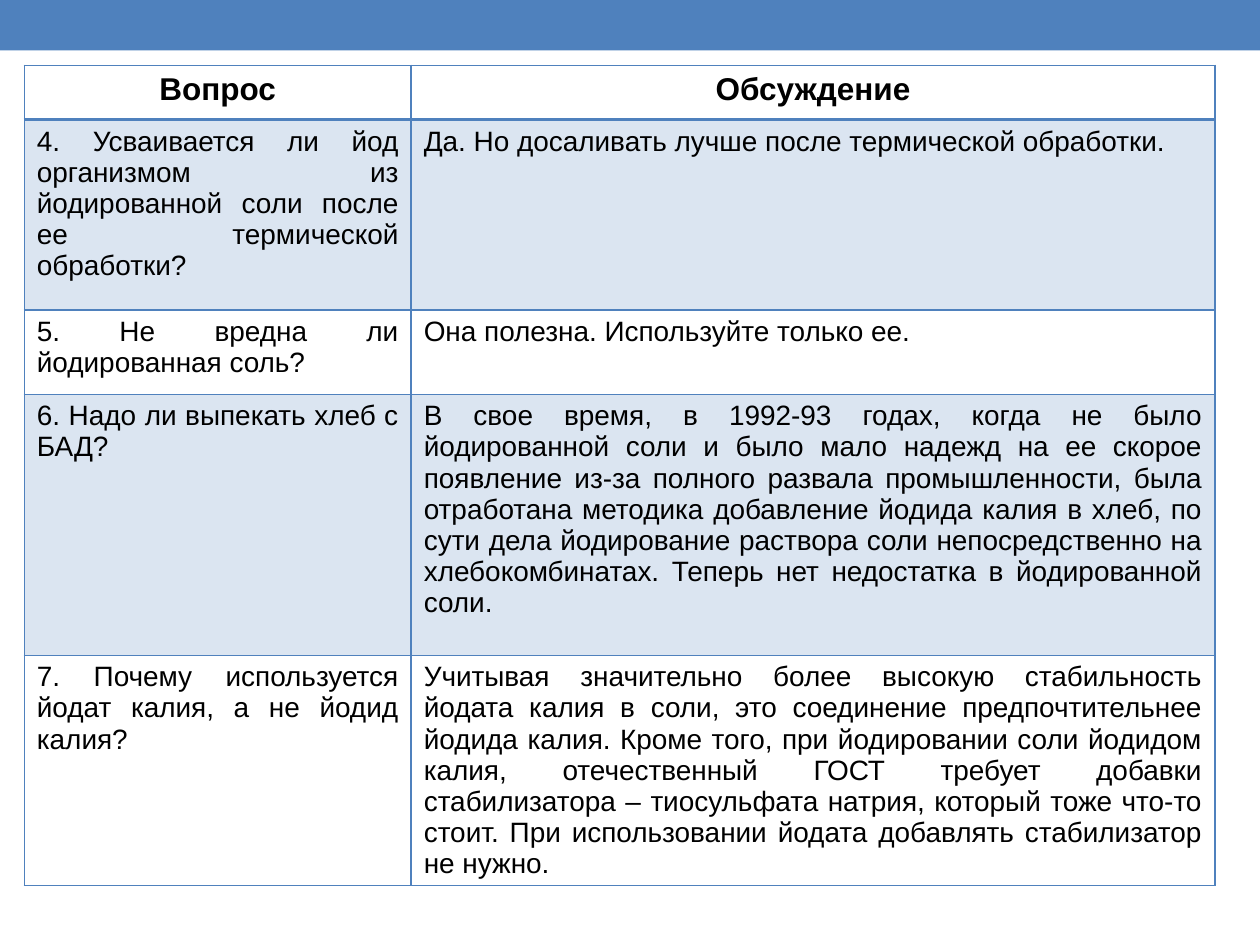
import lxml.etree
import pptx
import pptx.dml.color
import pptx.enum.shapes
import pptx.enum.text
import pptx.oxml.ns
import pptx.util
from pptx.util import Cm

THEME = {
    "font": "Arial",
    "text": pptx.dml.color.RGBColor.from_string("000000"),
    "accent": "4F81BD",
    "band_alpha": 20,
    "header_size": pptx.util.Pt(18),
    "body_size": pptx.util.Pt(16),
    "line": pptx.util.Pt(1),
    "header_line": pptx.util.Pt(2),
}
ACCENT = pptx.dml.color.RGBColor.from_string(THEME["accent"])
ALIGN = pptx.enum.text.PP_ALIGN

ROWS = [
    ("Вопрос", "Обсуждение"),
    ("4. Усваивается ли йод организмом из йодированной соли после ее "
     "термической обработки?",
     "Да. Но досаливать лучше после термической обработки."),
    ("5. Не вредна ли йодированная соль?",
     "Она полезна. Используйте только ее."),
    ("6. Надо ли выпекать хлеб с БАД?",
     "В свое время, в 1992-93 годах, когда не было йодированной соли и было "
     "мало надежд на ее скорое появление из-за полного развала промышленности, "
     "была отработана методика добавление йодида калия в хлеб, по сути дела "
     "йодирование раствора соли непосредственно на хлебокомбинатах. Теперь нет "
     "недостатка в йодированной соли."),
    ("7. Почему используется йодат калия, а не йодид калия?",
     "Учитывая значительно более высокую стабильность йодата калия в соли, это "
     "соединение предпочтительнее йодида калия. Кроме того, при йодировании "
     "соли йодидом калия, отечественный ГОСТ требует добавки стабилизатора – "
     "тиосульфата натрия, который тоже что-то стоит. При использовании йодата "
     "добавлять стабилизатор не нужно."),
]
COL_WIDTHS = [Cm(7.8), Cm(16.2)]
ROW_HEIGHTS = [Cm(1.09), Cm(3.84), Cm(1.7), Cm(5.26), Cm(4.55)]


def add_solid(parent, alpha=None):
    """Append an accent-coloured solid fill, with opacity in percent if given."""
    fill = lxml.etree.SubElement(parent, pptx.oxml.ns.qn("a:solidFill"))
    clr = lxml.etree.SubElement(fill, pptx.oxml.ns.qn("a:srgbClr"), val=THEME["accent"])
    if alpha is not None:
        lxml.etree.SubElement(clr, pptx.oxml.ns.qn("a:alpha"), val=str(alpha * 1000))


prs = pptx.Presentation()
prs.slide_width, prs.slide_height = Cm(25.4), Cm(19.05)
s = prs.slides.add_slide(prs.slide_layouts[6])

bar = s.shapes.add_shape(pptx.enum.shapes.MSO_SHAPE.RECTANGLE,
                         0, 0, prs.slide_width, Cm(1.02))
bar.shadow.inherit = False
bar.fill.solid()
bar.fill.fore_color.rgb = ACCENT
bar.line.fill.background()

table = s.shapes.add_table(len(ROWS), len(COL_WIDTHS), Cm(0.49), Cm(1.32),
                           sum(COL_WIDTHS), sum(ROW_HEIGHTS)).table
table.horz_banding = False
for column, width in zip(table.columns, COL_WIDTHS):
    column.width = width

for i, (texts, height) in enumerate(zip(ROWS, ROW_HEIGHTS)):
    table.rows[i].height = height
    header = i == 0
    for j, text in enumerate(texts):
        cell = table.cell(i, j)
        p = cell.text_frame.paragraphs[0]
        p.alignment = ALIGN.CENTER if header else ALIGN.JUSTIFY
        r = p.add_run()
        r.text = text
        r.font.name = THEME["font"]
        r.font.size = THEME["header_size"] if header else THEME["body_size"]
        r.font.bold = header
        r.font.color.rgb = THEME["text"]

        # Borders come before the fill in the cell properties
        tcPr = cell._tc.get_or_add_tcPr()
        for side in "LRTB":
            under_header = (i, side) in ((0, "B"), (1, "T"))
            width = THEME["header_line"] if under_header else THEME["line"]
            add_solid(lxml.etree.SubElement(tcPr, pptx.oxml.ns.qn(f"a:ln{side}"),
                                            w=str(int(width))))
        if i % 2:
            add_solid(tcPr, THEME["band_alpha"])
        else:
            cell.fill.background()

prs.save("out.pptx")
